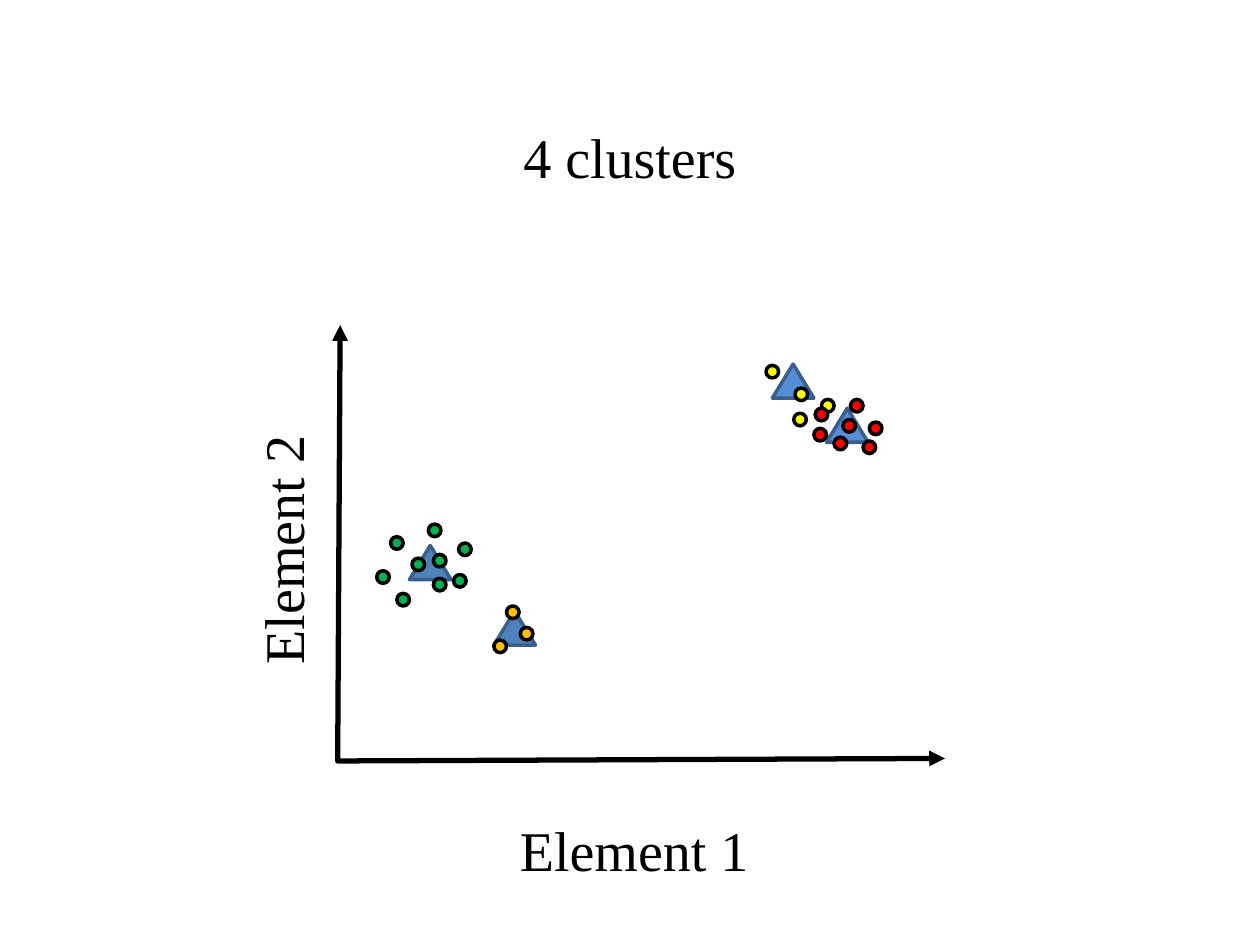
from collections import namedtuple

from lxml.etree import SubElement
from pptx import Presentation
from pptx.dml.color import RGBColor
from pptx.enum.shapes import MSO_SHAPE
from pptx.enum.text import PP_ALIGN
from pptx.oxml.ns import qn
from pptx.util import Inches, Pt

COLORS = {
    "ink": "000000",
    "outline": "3A5F8C",
    "light blue": "558ED5",
    "blue": "4F81BD",
    "yellow": "FFFF00",
    "red": "FF0000",
    "green": "00B050",
    "orange": "FFC000",
}
FONT = "Times New Roman"

# The slide is a grid of 1000 columns and 750 rows of square cells.
COLUMNS = 1000
SLIDE_WIDTH, SLIDE_HEIGHT = Inches(10), Inches(7.5)
CELL = SLIDE_WIDTH // COLUMNS

Box = namedtuple("Box", "left top width height")
Cluster = namedtuple("Cluster", "color centroid_color centroid members")

TITLE_BOX = Box(0, 92, COLUMNS, 64)
PLOT_BOX = Box(268, 258, 482, 346)
LABEL_HEIGHT = 64
DOT_SIZE = (10, 10)
CENTROID_SIZE = (33, 27)

# Centres of the marks, in cells from the plot's top left corner.
CLUSTERS = [
    Cluster("yellow", "light blue", (361.5, 44.5),
            [(389, 64), (367, 75), (368, 55), (345, 37)]),
    Cluster("green", "blue", (73.5, 188.5),
            [(47, 173), (64, 190), (81, 206), (101, 178), (52, 218),
             (36, 200), (77, 163), (81, 187), (97, 203)]),
    Cluster("red", "light blue", (404.5, 79.5),
            [(406, 80), (412, 64), (422, 97), (427, 82), (383, 87),
             (384, 71), (399, 94)]),
    Cluster("orange", "blue", (140.5, 240.5),
            [(139, 228), (129, 255), (150, 245)]),
]


def rgb(name):
    return RGBColor.from_string(COLORS[name])


def to_emu(box):
    return [round(cells * CELL) for cells in box]


def centered_box(center, size):
    (x, y), (width, height) = center, size
    return Box(x - width / 2, y - height / 2, width, height)


def add_label(page, box, text, rotation=0):
    label = page.shapes.add_textbox(*to_emu(box))
    label.rotation = rotation
    label.text_frame.word_wrap = True
    para = label.text_frame.paragraphs[0]
    para.alignment = PP_ALIGN.CENTER
    span = para.add_run()
    span.text = text
    span.font.name = FONT
    span.font.size = Pt(32)
    span.font.color.rgb = rgb("ink")


def add_mark(page, plot, kind, center, size, fill, line):
    x, y = center
    box = centered_box((plot.left + x, plot.top + y), size)
    mark = page.shapes.add_shape(kind, *to_emu(box))
    mark.shadow.inherit = False
    mark.fill.solid()
    mark.fill.fore_color.rgb = rgb(fill)
    mark.line.color.rgb = rgb(line)
    mark.line.width = Pt(2)


def add_axes(page, plot):
    """Draw both axes as one open line with an arrowhead at each end."""
    bottom = plot.top + plot.height
    builder = page.shapes.build_freeform(plot.left + 2, plot.top, scale=CELL)
    builder.add_line_segments(
        [(plot.left, bottom), (plot.left + plot.width, bottom - 2)], close=False)
    axes = builder.convert_to_shape()
    axes.shadow.inherit = False
    axes.fill.background()
    axes.line.color.rgb = rgb("ink")
    axes.line.width = Pt(3)
    line = axes.line._get_or_add_ln()
    for end in ("a:headEnd", "a:tailEnd"):
        SubElement(line, qn(end), type="triangle")


def add_axis_labels(page, plot):
    size = (plot.width, LABEL_HEIGHT)
    middle_x = plot.left + plot.width / 2
    middle_y = plot.top + plot.height / 2
    below = (middle_x, plot.top + plot.height + 70)
    beside = (plot.left - 44, middle_y)
    add_label(page, centered_box(below, size), "Element 1 ")
    add_label(page, centered_box(beside, size), "Element 2 ", rotation=270)


def add_plot(page, plot):
    for cluster in CLUSTERS:
        add_mark(page, plot, MSO_SHAPE.ISOSCELES_TRIANGLE, cluster.centroid,
                 CENTROID_SIZE, cluster.centroid_color, "outline")
    add_axes(page, plot)
    for cluster in CLUSTERS:
        for member in cluster.members:
            add_mark(page, plot, MSO_SHAPE.OVAL, member,
                     DOT_SIZE, cluster.color, "ink")
    add_axis_labels(page, plot)


def main():
    deck = Presentation()
    deck.slide_width, deck.slide_height = SLIDE_WIDTH, SLIDE_HEIGHT
    page = deck.slides.add_slide(deck.slide_layouts[6])
    add_label(page, TITLE_BOX, "4 clusters")
    add_plot(page, PLOT_BOX)
    deck.save("out.pptx")


if __name__ == "__main__":
    main()
